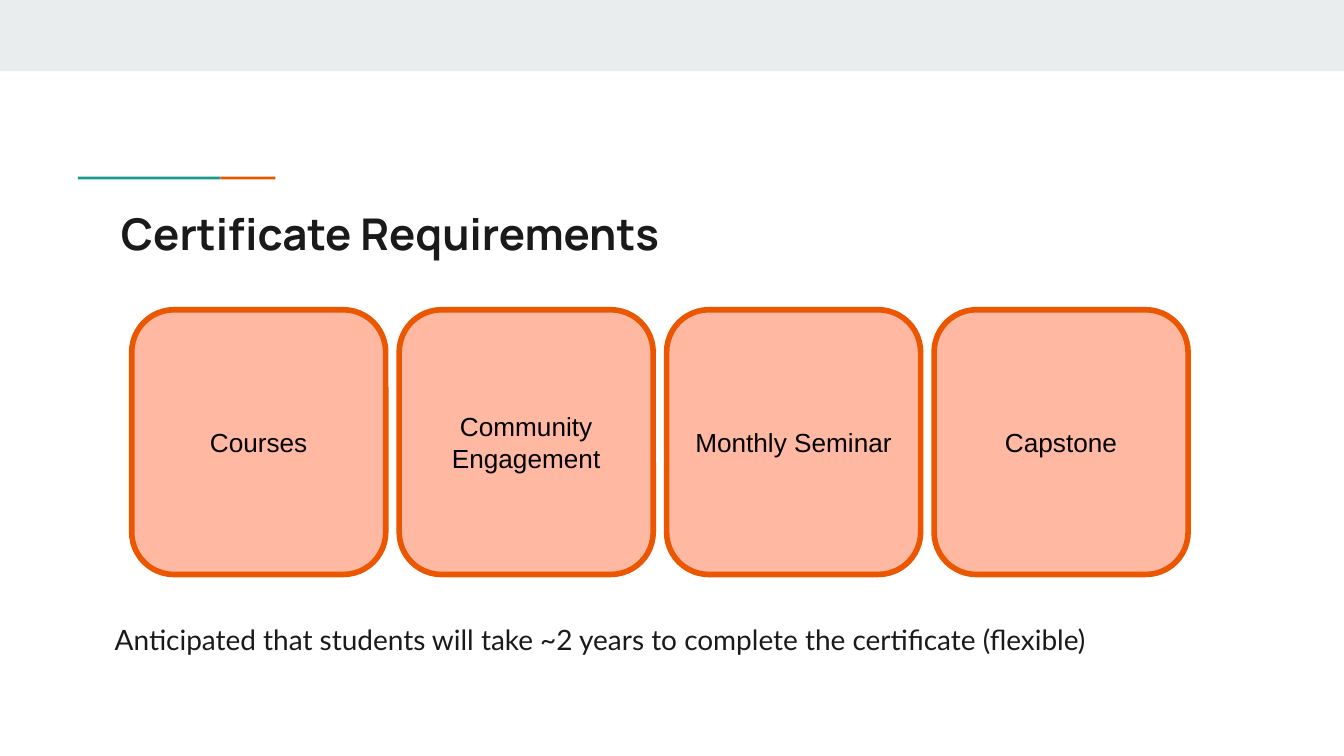
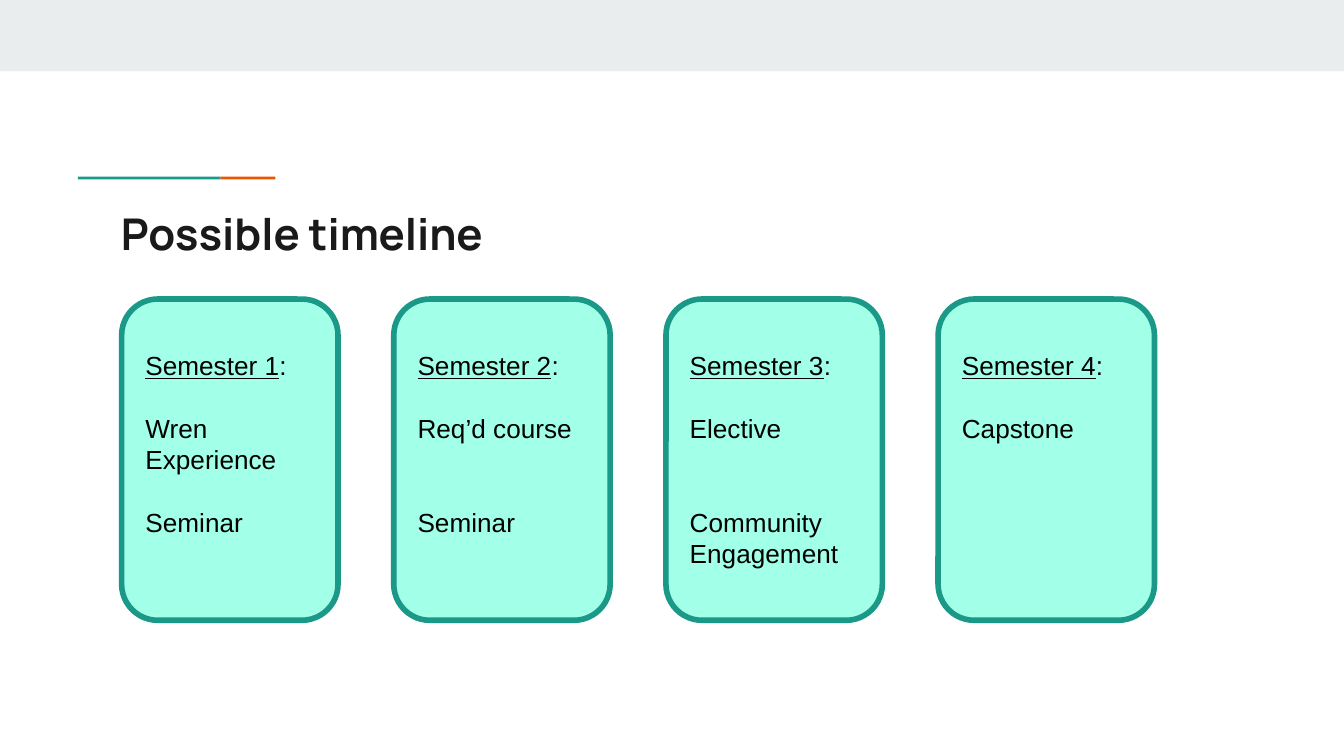
from pptx import Presentation
from pptx.dml.color import RGBColor
from pptx.enum.shapes import MSO_SHAPE as SHAPE
from pptx.enum.text import MSO_ANCHOR as ANCHOR, MSO_AUTO_SIZE as FIT, PP_ALIGN as ALIGN
from pptx.util import Pt

PX = 4572  # 200 px to the inch

INK = RGBColor(0x1A, 0x1A, 0x1A)
BLACK = RGBColor(0, 0, 0)
GREY = RGBColor(0xE9, 0xED, 0xEE)
ORANGE = RGBColor(0xEB, 0x56, 0x00)
PEACH = RGBColor(0xFF, 0xB8, 0xA2)
TEAL = RGBColor(0x1A, 0x99, 0x88)
MINT = RGBColor(0xA2, 0xFF, 0xE8)


def write(frame, text, size=14, font="Arial", color=BLACK, bold=False,
          under=False, align=ALIGN.LEFT, gap=0, new=True, anchor=ANCHOR.TOP, top=20):
    """Add a paragraph, or with new=False a run in the last one."""
    frame.word_wrap = True
    frame.auto_size = FIT.NONE
    frame.vertical_anchor = anchor
    frame.margin_left = frame.margin_right = frame.margin_bottom = 20 * PX
    frame.margin_top = top * PX
    para = frame.paragraphs[-1]
    if new and para.runs:
        para = frame.add_paragraph()
    para.alignment = align
    if gap:
        para.space_before = Pt(gap)
    run = para.add_run()
    run.text = text
    run.font.size = Pt(size)
    run.font.name = font
    run.font.color.rgb = color
    run.font.bold = bold
    run.font.underline = under


def block(slide, kind, x, y, w, h, fill, edge=None):
    shape = slide.shapes.add_shape(kind, x * PX, y * PX, w * PX, h * PX)
    shape.shadow.inherit = False
    shape.fill.solid()
    shape.fill.fore_color.rgb = fill
    if edge is None:
        shape.line.fill.background()
    else:
        shape.line.color.rgb = edge
        shape.line.width = Pt(3)
    return shape


prs = Presentation()
prs.slide_width, prs.slide_height = 2000 * PX, 1125 * PX

# Shared frame: band, two-colour rule and title
slides = []
for name in ("Certificate Requirements", "Possible timeline"):
    slide = prs.slides.add_slide(prs.slide_layouts[5])
    block(slide, SHAPE.RECTANGLE, 0, 0, 2000, 106, GREY)
    block(slide, SHAPE.RECTANGLE, 328, 263, 82, 4, ORANGE)
    block(slide, SHAPE.RECTANGLE, 116, 263, 212, 4, TEAL)
    title = slide.shapes.title
    title.left, title.top, title.width, title.height = 160 * PX, 288 * PX, 1682 * PX, 118 * PX
    write(title.text_frame, name, size=23.4, font="Manrope", color=INK, bold=True)
    slides.append(slide)
needs, plan = slides

# Requirements: four cards and a note
for i, name in enumerate(("Courses", "Community Engagement", "Monthly Seminar", "Capstone")):
    card = block(needs, SHAPE.ROUNDED_RECTANGLE, 196 + 398 * i, 461, 378, 394, PEACH, ORANGE)
    write(card.text_frame, name, align=ALIGN.CENTER, anchor=ANCHOR.MIDDLE)

note = needs.shapes.add_textbox(151 * PX, 907 * PX, 1682 * PX, 90 * PX)
write(note.text_frame,
      "Anticipated that students will take ~2 years to complete the certificate (flexible)",
      size=15, font="Lato", color=INK)

# Timeline: one card a semester, each step with the gap above it
LINE = 16.8
terms = [
    [("Wren Experience", LINE), ("Seminar", LINE)],
    [("Req’d course", LINE), ("Seminar", 2 * LINE)],
    [("Elective", LINE), ("Community Engagement", 2 * LINE)],
    [("Capstone", LINE)],
]
for i, steps in enumerate(terms):
    card = block(plan, SHAPE.ROUNDED_RECTANGLE, 181 + 405 * i, 445, 322, 478, MINT, TEAL)
    frame = card.text_frame
    write(frame, f"Semester {i + 1}", under=True, top=59)
    write(frame, ":", new=False, top=59)
    for step, gap in steps:
        write(frame, step, gap=gap, top=59)

prs.save("out.pptx")
